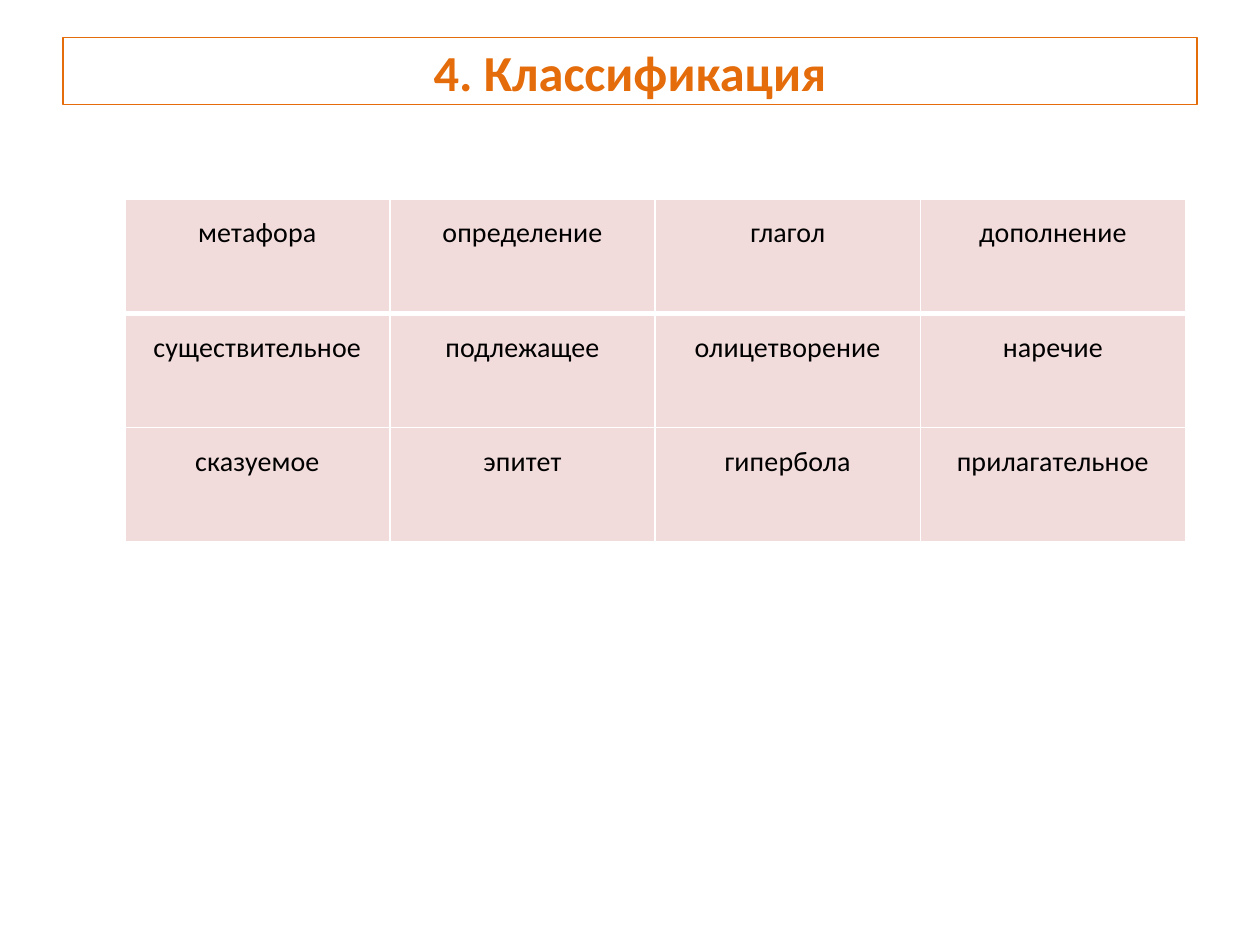
from dataclasses import dataclass

from lxml.etree import SubElement
from pptx import Presentation
from pptx.dml.color import RGBColor
from pptx.enum.text import MSO_ANCHOR, MSO_AUTO_SIZE, PP_ALIGN
from pptx.oxml.ns import qn
from pptx.slide import Slide
from pptx.util import Inches, Pt

COLORS = {"accent": "E46C0A", "cell": "F2DCDB", "text": "000000", "border": "FFFFFF"}

TERMS = [
    ["метафора", "определение", "глагол", "дополнение"],
    ["существительное", "подлежащее", "олицетворение", "наречие"],
    ["сказуемое", "эпитет", "гипербола", "прилагательное"],
]


def color(name):
    return RGBColor.from_string(COLORS[name])


@dataclass
class SlideBuilder:
    slide: Slide
    font: str = "Calibri"

    def add_run(self, para, text, size, color_name, bold=False):
        para.alignment = PP_ALIGN.CENTER
        span = para.add_run()
        span.text = text
        span.font.name = self.font
        span.font.size = Pt(size)
        span.font.bold = bold
        span.font.color.rgb = color(color_name)
        return span

    def title(self, text, left, top, width, height):
        box = self.slide.shapes.title
        box.left, box.top = Inches(left), Inches(top)
        box.width, box.height = Inches(width), Inches(height)
        box.line.color.rgb = color("accent")
        box.line.width = Pt(0.75)
        frame = box.text_frame
        frame.auto_size = MSO_AUTO_SIZE.NONE
        frame.vertical_anchor = MSO_ANCHOR.MIDDLE
        self.add_run(frame.paragraphs[0], text, 28.8, "accent", bold=True)

    def table(self, rows, left, top, width, height):
        frame = self.slide.shapes.add_table(
            len(rows), len(rows[0]),
            Inches(left), Inches(top), Inches(width), Inches(height))
        for row_index, row in enumerate(rows):
            for column_index, text in enumerate(row):
                cell = frame.table.cell(row_index, column_index)
                self.fill_cell(cell, text)
                self.cell_borders(
                    cell,
                    top=3 if row_index == 1 else 1,
                    bottom=3 if row_index == 0 else 1)

    def fill_cell(self, cell, text):
        cell.margin_left = cell.margin_right = Inches(0.07)
        cell.margin_top = cell.margin_bottom = 0
        cell.vertical_anchor = MSO_ANCHOR.TOP
        cell.fill.solid()
        cell.fill.fore_color.rgb = color("cell")
        para = cell.text_frame.paragraphs[0]
        para.line_spacing = 1.5
        span = self.add_run(para, text, 16, "text")
        span.font._element.set("spc", "10")

    def cell_borders(self, cell, top, bottom):
        """Draw the four edges; they must come before the fill in the cell's XML."""
        properties = cell._tc.get_or_add_tcPr()
        edges = {"a:lnL": 1, "a:lnR": 1, "a:lnT": top, "a:lnB": bottom}
        for position, (tag, width) in enumerate(edges.items()):
            edge = SubElement(properties, qn(tag), w=str(Pt(width)))
            fill = SubElement(edge, qn("a:solidFill"))
            SubElement(fill, qn("a:srgbClr"), val=COLORS["border"])
            properties.insert(position, edge)


def main():
    deck = Presentation()
    deck.slide_width, deck.slide_height = Inches(10), Inches(7.5)
    page = SlideBuilder(deck.slides.add_slide(deck.slide_layouts[5]))
    page.title("4. Классификация", 0.5, 0.3, 9, 0.53)
    page.table(TERMS, 0.99, 1.58, 8.42, 2.72)
    deck.save("out.pptx")


if __name__ == "__main__":
    main()
